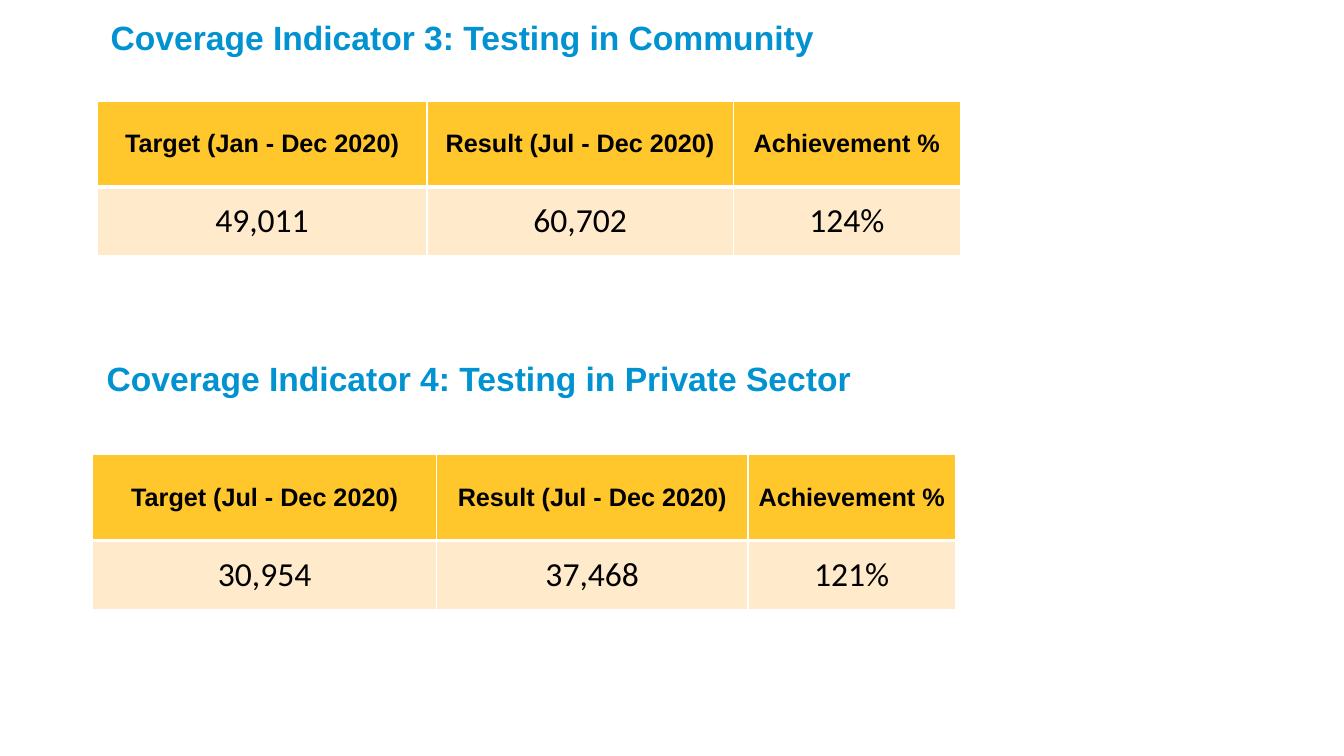
from dataclasses import dataclass

from lxml.etree import SubElement
from pptx import Presentation
from pptx.dml.color import RGBColor
from pptx.enum.text import MSO_ANCHOR, PP_ALIGN
from pptx.oxml.ns import qn
from pptx.util import Cm, Pt


@dataclass(frozen=True)
class Theme:
    """Colours, fonts and sizes of the slide."""
    heading: str = "0092D1"
    header_fill: str = "FFC72C"
    value_fill: str = "FFEBCB"
    text: str = "000000"
    border: str = "FFFFFF"
    heading_font: str = "Arial"
    value_font: str = "Calibri"
    large: int = 24
    small: int = 18


@dataclass(frozen=True)
class Box:
    """A rectangle in centimetres."""
    left: float
    top: float
    width: float
    height: float

    def lengths(self):
        """Return the rectangle as slide lengths."""
        return Cm(self.left), Cm(self.top), Cm(self.width), Cm(self.height)


THEME = Theme()
ROW_HEIGHTS = (2.16, 1.73)


def style_paragraph(paragraph, font_name, size, color, bold):
    """Set the font of a whole paragraph."""
    font = paragraph.font
    font.name, font.size, font.bold = font_name, Pt(size), bold
    font.color.rgb = RGBColor.from_string(color)


def set_margins(target, horizontal, vertical):
    """Set the inner margins of a cell or text frame."""
    target.margin_left = target.margin_right = Cm(horizontal)
    target.margin_top = target.margin_bottom = Cm(vertical)


def set_borders(cell, widths):
    """Draw the cell edges with the given widths in points."""
    properties = cell._tc.get_or_add_tcPr()
    for side, width in widths.items():
        line = SubElement(properties, qn(f"a:ln{side}"), w=str(Pt(width)))
        fill = SubElement(line, qn("a:solidFill"))
        SubElement(fill, qn("a:srgbClr"), val=THEME.border)


def add_heading(slide, box, text, margin, anchor):
    """Add an indicator heading in the box."""
    frame = slide.shapes.add_textbox(*box.lengths()).text_frame
    frame.word_wrap = True
    frame.vertical_anchor = anchor
    set_margins(frame, margin, margin)
    paragraph = frame.paragraphs[0]
    paragraph.text = text
    style_paragraph(paragraph, THEME.heading_font, THEME.large, THEME.heading, True)


def fill_cell(cell, text, is_header):
    """Write and style one header or value cell."""
    cell.text = text
    cell.vertical_anchor = MSO_ANCHOR.MIDDLE
    set_margins(cell, *((0.25, 0.13) if is_header else (0, 0)))
    set_borders(cell, {"L": 1, "R": 1, "T": 1 if is_header else 3, "B": 3 if is_header else 1})
    cell.fill.solid()
    cell.fill.fore_color.rgb = RGBColor.from_string(
        THEME.header_fill if is_header else THEME.value_fill)
    paragraph = cell.text_frame.paragraphs[0]
    paragraph.alignment = PP_ALIGN.CENTER
    font_name = THEME.heading_font if is_header else THEME.value_font
    size = THEME.small if is_header else THEME.large
    style_paragraph(paragraph, font_name, size, THEME.text, is_header)


def add_result_table(slide, left, top, column_widths, rows):
    """Add a table of target, result and achievement."""
    box = Box(left, top, sum(column_widths), sum(ROW_HEIGHTS))
    table = slide.shapes.add_table(len(rows), len(column_widths), *box.lengths()).table
    table.first_row = table.horz_banding = False
    for column, width in zip(table.columns, column_widths):
        column.width = Cm(width)
    for row_index, (row, height, texts) in enumerate(zip(table.rows, ROW_HEIGHTS, rows)):
        row.height = Cm(height)
        for cell, text in zip(row.cells, texts):
            fill_cell(cell, text, row_index == 0)


def main():
    """Build and save the presentation."""
    presentation = Presentation()
    presentation.slide_width, presentation.slide_height = Cm(33.87), Cm(19.05)
    slide = presentation.slides.add_slide(presentation.slide_layouts[6])
    add_heading(slide, Box(2.79, -0.18, 28.52, 2.21),
                "Coverage Indicator 3: Testing in Community", 0, MSO_ANCHOR.MIDDLE)
    add_result_table(slide, 2.45, 2.55, (8.31, 7.72, 5.72), (
        ("Target (Jan - Dec 2020)", "Result (Jul - Dec 2020)", "Achievement %"),
        ("49,011", "60,702", "124%")))
    add_heading(slide, Box(2.44, 8.76, 28.52, 1.55),
                "Coverage Indicator 4: Testing in Private Sector", 0.25, MSO_ANCHOR.TOP)
    add_result_table(slide, 2.34, 11.46, (8.66, 7.85, 5.23), (
        ("Target (Jul - Dec 2020)", "Result (Jul - Dec 2020)", "Achievement %"),
        ("30,954", "37,468", "121%")))
    presentation.save("out.pptx")


if __name__ == "__main__":
    main()
